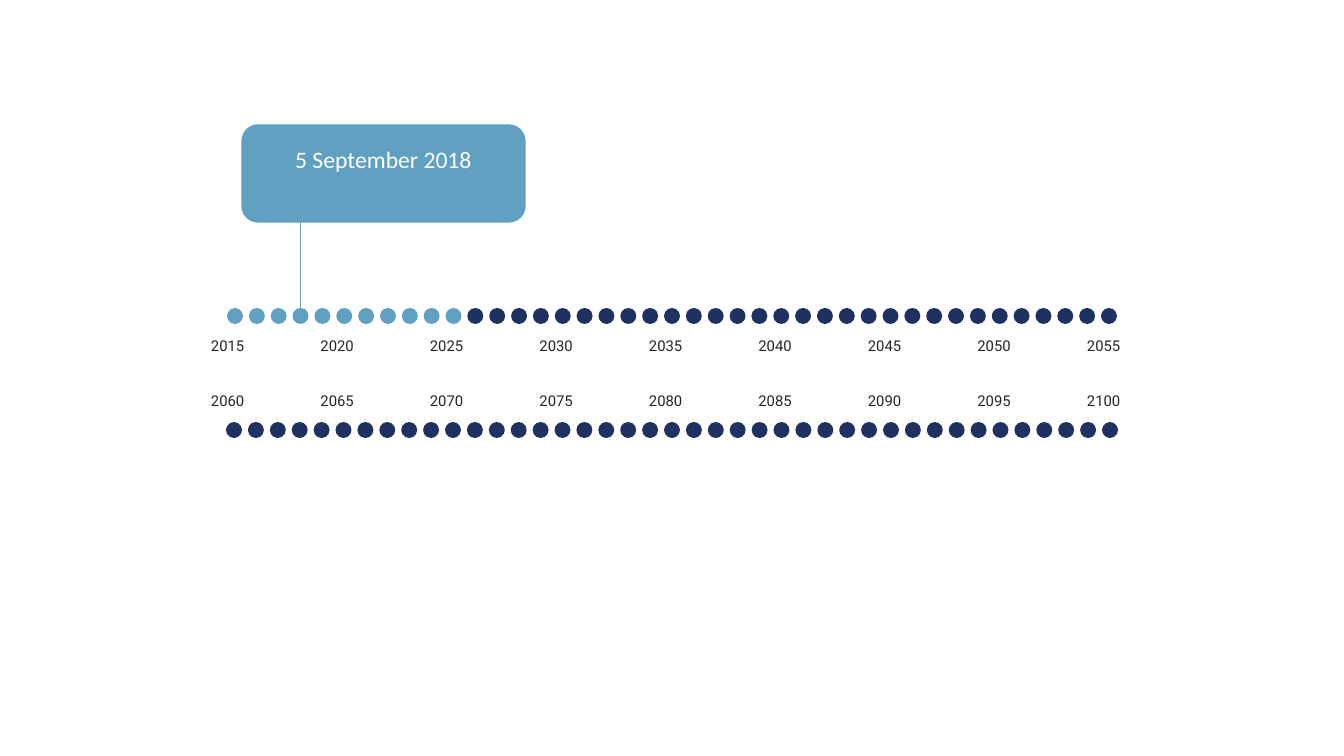
from pptx import Presentation
from pptx.dml.color import RGBColor
from pptx.enum.shapes import MSO_CONNECTOR, MSO_SHAPE
from pptx.enum.text import MSO_ANCHOR, PP_ALIGN
from pptx.oxml.ns import qn
from pptx.util import Emu, Pt
from lxml.etree import SubElement

EVENT = {"text": "5 September 2018", "year": 2018, "box": (242, 125, 283, 97)}
LAST_HIGHLIGHTED_YEAR = 2025
# first year, last year, first dot x, last dot x, dot y, first label x, label y
ROWS = [
    (2015, 2055, 227, 1101, 308, 211, 334),
    (2060, 2100, 226, 1102, 422, 211, 389),
]
LABEL_STEP = 5
LABEL_WIDTH, LABEL_HEIGHT = 45, 24
LABEL_SPAN = 876
DOT = 16
BLUE, NAVY, INK, WHITE = "60A1C1", "1F3161", "262626", "FFFFFF"


def px(length):
    return Emu(round(length * 914400 / 100.8))


def color(code):
    return RGBColor.from_string(code)


def add_filled(preset, box, fill):
    shape = slide.shapes.add_shape(preset, *map(px, box))
    shape.shadow.inherit = False
    shape.fill.solid()
    shape.fill.fore_color.rgb = color(fill)
    shape.line.fill.background()
    return shape


def write(frame, text, font, size, ink, align, anchor, inset_top=0):
    frame.margin_left = frame.margin_right = frame.margin_bottom = 0
    frame.margin_top = px(inset_top)
    frame.vertical_anchor = anchor
    frame.word_wrap = True
    paragraph = frame.paragraphs[0]
    paragraph.alignment = align
    run = paragraph.add_run()
    run.text = text
    run.font.name = font
    run.font.size = Pt(size)
    run.font.color.rgb = color(ink)


def add_year_row(first, last, dot_left, dot_right, dot_top, label_left, label_top):
    years = last - first
    for offset in range(0, years + 1, LABEL_STEP):
        label = slide.shapes.add_textbox(
            px(label_left + LABEL_SPAN * offset / years), px(label_top),
            px(LABEL_WIDTH), px(LABEL_HEIGHT))
        write(label.text_frame, str(first + offset), "Roboto", 10.6, INK,
              PP_ALIGN.LEFT, MSO_ANCHOR.MIDDLE)
    for offset in range(years + 1):
        left = dot_left + (dot_right - dot_left) * offset / years
        fill = BLUE if first + offset <= LAST_HIGHLIGHTED_YEAR else NAVY
        add_filled(MSO_SHAPE.OVAL, (left, dot_top, DOT, DOT), fill)


def add_event():
    """Draw the callout box and its line to the dot of the event's year."""
    first, last, dot_left, dot_right, dot_top = ROWS[0][:5]
    share = (EVENT["year"] - first) / (last - first)
    x = px(dot_left + (dot_right - dot_left) * share + DOT / 2)
    _, top, _, height = EVENT["box"]
    stem = slide.shapes.add_connector(
        MSO_CONNECTOR.STRAIGHT, x, px(dot_top + DOT / 2), x, px(top + height))
    stem.line.color.rgb = color(BLUE)
    stem.line.width = Pt(0.75)
    SubElement(stem.element.spPr, qn("a:effectLst"))

    callout = add_filled(MSO_SHAPE.ROUNDED_RECTANGLE, EVENT["box"], BLUE)
    callout.line.color.rgb = color(BLUE)
    callout.line.width = Pt(1)
    write(callout.text_frame, EVENT["text"], "Calibri", 16.9, WHITE,
          PP_ALIGN.CENTER, MSO_ANCHOR.TOP, inset_top=15)


prs = Presentation()
prs.slide_width, prs.slide_height = px(1344), px(756)
slide = prs.slides.add_slide(prs.slide_layouts[6])
for row in ROWS:
    add_year_row(*row)
add_event()
prs.save("out.pptx")
